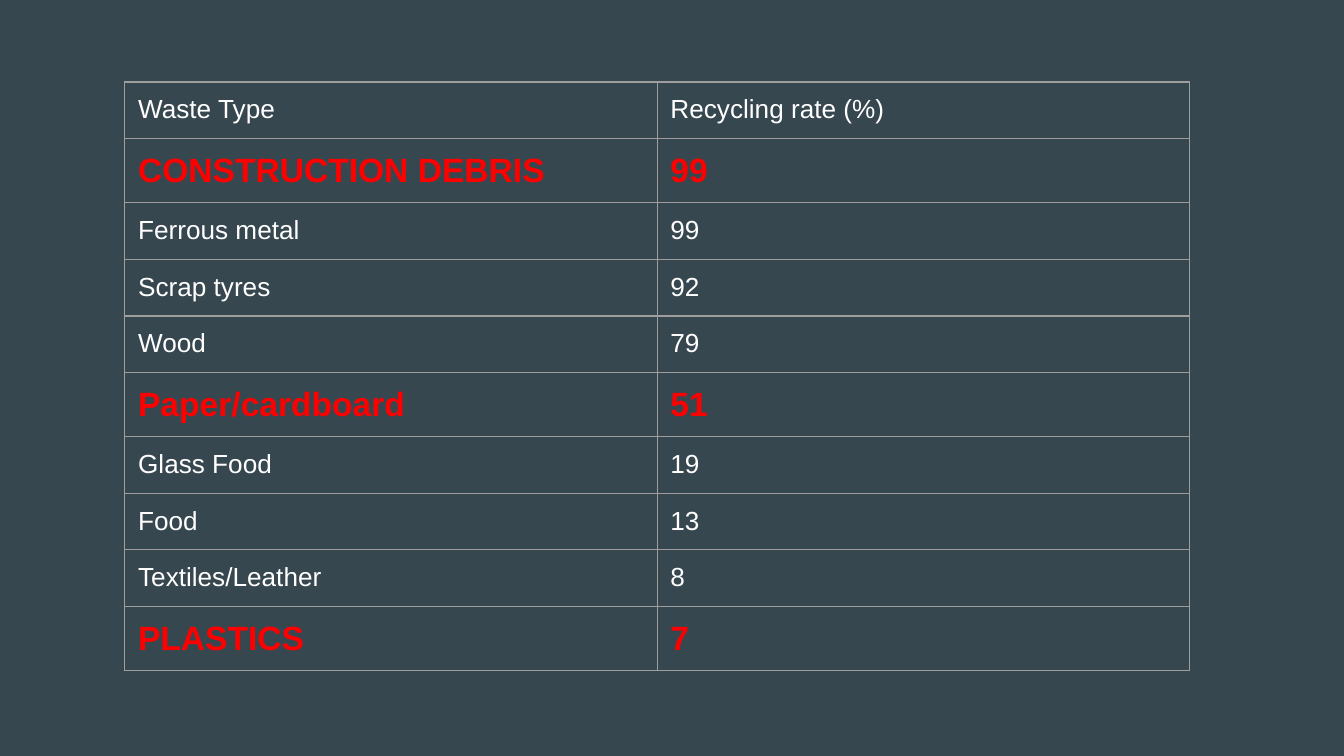
"""Build a slide with a table of recycling rates by waste type."""
from dataclasses import dataclass

from lxml.etree import SubElement as Sub
from pptx import Presentation
from pptx.dml.color import RGBColor as Rgb
from pptx.oxml.ns import qn
from pptx.slide import Slide
from pptx.table import Table, _Cell as Cell
from pptx.util import Cm, Pt

BACK, LINE, PLAIN, HOT = "37474F", "9E9E9E", "FFFFFF", "FF0000"
WIDE, HIGH, PAD = 10.06, 1.07, 0.25


@dataclass
class Row:
    waste: str
    rate: str
    hot: bool = False


ROWS = [
    Row("Waste Type", "Recycling rate (%)"),
    Row("CONSTRUCTION DEBRIS", "99", True),
    Row("Ferrous metal", "99"),
    Row("Scrap tyres", "92"),
    Row("Wood", "79"),
    Row("Paper/cardboard", "51", True),
    Row("Glass Food", "19"),
    Row("Food", "13"),
    Row("Textiles/Leather", "8"),
    Row("PLASTICS", "7", True),
]


def paint(form, tone: str) -> None:
    form.rgb = Rgb.from_string(tone)


def frame(cell: Cell) -> None:
    prop = cell._tc.get_or_add_tcPr()
    for side in "LRTB":
        edge = Sub(prop, qn(f"a:ln{side}"), w=str(Pt(0.75)))
        fill = Sub(edge, qn("a:solidFill"))
        Sub(fill, qn("a:srgbClr"), val=LINE)


def write(cell: Cell, text: str, hot: bool) -> None:
    frame(cell)
    cell.fill.background()
    cell.margin_left = cell.margin_right = Cm(PAD)
    cell.margin_top = cell.margin_bottom = Cm(PAD)
    run = cell.text_frame.paragraphs[0].add_run()
    run.text = text
    run.font.name = "Arial"
    run.font.size = Pt(18 if hot else 14)
    run.font.bold = hot
    paint(run.font.color, HOT if hot else PLAIN)


def draw(slide: Slide, rows: list[Row]) -> Table:
    table = slide.shapes.add_table(
        len(rows), 2, Cm(2.36), Cm(1.55), Cm(2 * WIDE), Cm(len(rows) * HIGH)
    ).table
    table.first_row = table.horz_banding = False
    for line, row in zip(table.rows, rows):
        for cell, text in zip(line.cells, (row.waste, row.rate)):
            write(cell, text, row.hot)
    return table


def main() -> None:
    deck = Presentation()
    deck.slide_width, deck.slide_height = Cm(25.4), Cm(14.29)
    slide = deck.slides.add_slide(deck.slide_layouts[6])
    back = slide.background.fill
    back.solid()
    paint(back.fore_color, BACK)
    draw(slide, ROWS)
    deck.save("out.pptx")


if __name__ == "__main__":
    main()
